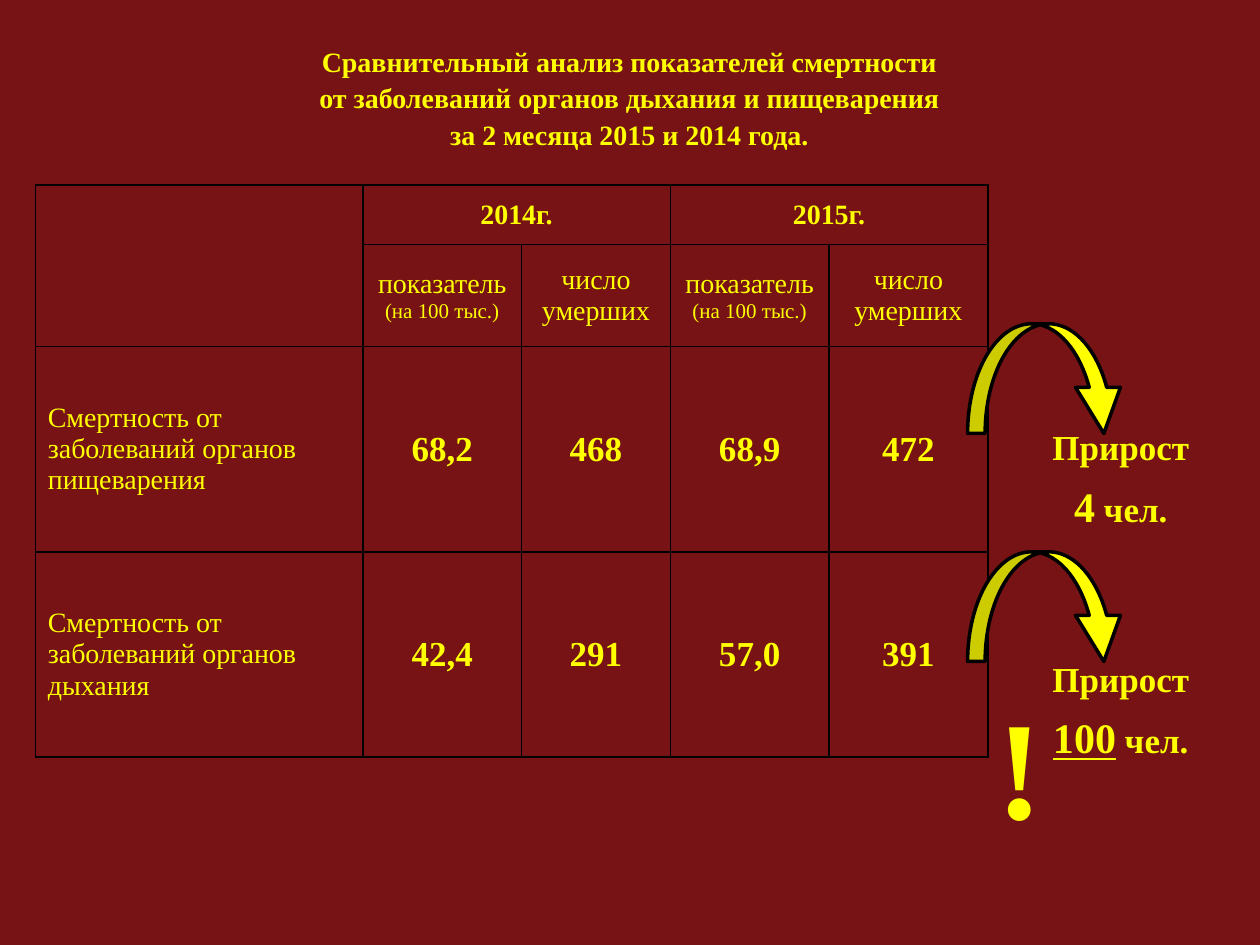
from lxml.etree import SubElement
from pptx import Presentation
from pptx.dml.color import RGBColor
from pptx.enum.shapes import MSO_SHAPE as Shape
from pptx.enum.text import MSO_ANCHOR as Anchor, PP_ALIGN as Align
from pptx.oxml.ns import qn
from pptx.util import Inches, Pt

COLORS = {"background": "771315", "text": "FFFF00", "line": "000000"}
FONT = "Times New Roman"

# Content: a paragraph is a list of runs (text, size, bold, underline)
TITLE_LINES = [
    "Сравнительный анализ показателей смертности",
    "от заболеваний органов дыхания и пищеварения",
    "за 2 месяца 2015 и 2014 года.",
]
YEARS = ["2014г.", "2015г."]
MEASURES = [
    [[("показатель", 16, False, False)], [("(на 100 тыс.)", 12, False, False)]],
    [[("число умерших", 16, False, False)]],
]
MORTALITY = [
    ("Смертность от заболеваний органов пищеварения", ["68,2", "468", "68,9", "472"]),
    ("Смертность от заболеваний органов дыхания", ["42,4", "291", "57,0", "391"]),
]
# Growth in deaths: number, underlined, arrow top, label top
GROWTH = [("4", False, 2.57, 3.38), ("100", True, 4.38, 5.22)]

COLUMN_WIDTHS = [2.6, 1.26, 1.18, 1.26, 1.26]
ROW_HEIGHTS = [0.47, 0.81, 1.63, 1.63]


def color(key):
    return RGBColor.from_string(COLORS[key])


def write(frame, paragraphs, align=Align.CENTER, space_before=0):
    for i, runs in enumerate(paragraphs):
        paragraph = frame.paragraphs[0] if i == 0 else frame.add_paragraph()
        paragraph.alignment = align
        if i:
            paragraph.space_before = Pt(space_before)
        for text, size, bold, underline in runs:
            run = paragraph.add_run()
            run.text = text
            run.font.name, run.font.size = FONT, Pt(size)
            run.font.bold, run.font.underline = bold, underline
            run.font.color.rgb = color("text")


def add_text_area(left, top, width, height):
    frame = slide.shapes.add_textbox(
        Inches(left), Inches(top), Inches(width), Inches(height)).text_frame
    frame.word_wrap = True
    return frame


def border(cell):
    properties = cell._tc.get_or_add_tcPr()
    for i, side in enumerate(("a:lnL", "a:lnR", "a:lnT", "a:lnB")):
        line = SubElement(properties, qn(side), w=str(Pt(1)))
        fill = SubElement(line, qn("a:solidFill"))
        SubElement(fill, qn("a:srgbClr"), val=COLORS["line"])
        properties.remove(line)
        properties.insert(i, line)


prs = Presentation()
prs.slide_width, prs.slide_height = Inches(10), Inches(7.5)
slide = prs.slides.add_slide(prs.slide_layouts[6])
slide.background.fill.solid()
slide.background.fill.fore_color.rgb = color("background")

# Title
title = add_text_area(0.27, 0.3, 9.45, 0.93)
title.vertical_anchor = Anchor.MIDDLE
write(title, [[(line, 16, True, False)] for line in TITLE_LINES])
for paragraph in title.paragraphs:
    paragraph.line_spacing = 1.08

# Mortality table
table = slide.shapes.add_table(
    len(ROW_HEIGHTS), len(COLUMN_WIDTHS), Inches(0.28), Inches(1.47),
    Inches(sum(COLUMN_WIDTHS)), Inches(sum(ROW_HEIGHTS))).table
table.first_row = table.horz_banding = False
for column, width in zip(table.columns, COLUMN_WIDTHS):
    column.width = Inches(width)
for row, height in zip(table.rows, ROW_HEIGHTS):
    row.height = Inches(height)
for cell in table.iter_cells():
    cell.fill.background()
    cell.vertical_anchor = Anchor.MIDDLE
    border(cell)

table.cell(0, 0).merge(table.cell(1, 0))
for i, year in enumerate(YEARS):
    first = 1 + i * len(MEASURES)
    table.cell(0, first).merge(table.cell(0, first + len(MEASURES) - 1))
    write(table.cell(0, first).text_frame, [[(year, 16, True, False)]])
    for j, measure in enumerate(MEASURES):
        write(table.cell(1, first + j).text_frame, measure)
for r, (cause, values) in enumerate(MORTALITY, start=2):
    write(table.cell(r, 0).text_frame, [[(cause, 16, False, False)]], Align.LEFT)
    for c, value in enumerate(values, start=1):
        write(table.cell(r, c).text_frame, [[(value, 20, True, False)]])

# Growth arrows and labels
for number, underlined, arrow_top, label_top in GROWTH:
    arrow = slide.shapes.add_shape(
        Shape.CURVED_DOWN_ARROW, Inches(7.68), Inches(arrow_top),
        Inches(1.26), Inches(0.87))
    for i, value in enumerate((0.16, 0.41, 0.42)):
        arrow.adjustments[i] = value
    arrow.shadow.inherit = False
    arrow.fill.solid()
    arrow.fill.fore_color.rgb = color("text")
    arrow.line.color.rgb = color("line")
    arrow.line.width = Pt(2)

    label = add_text_area(7.99, label_top, 1.81, 0.8)
    label.margin_top = label.margin_bottom = 0
    write(label, [
        [("Прирост", 20, True, False)],
        [(number, 24, True, underlined), (" чел.", 20, True, False)],
    ], space_before=7)

# Exclamation mark
warning = add_text_area(7.68, 5.22, 0.83, 1.45)
warning.margin_top = Inches(0.17)
write(warning, [[("!", 80, True, False)]])

prs.save("out.pptx")
